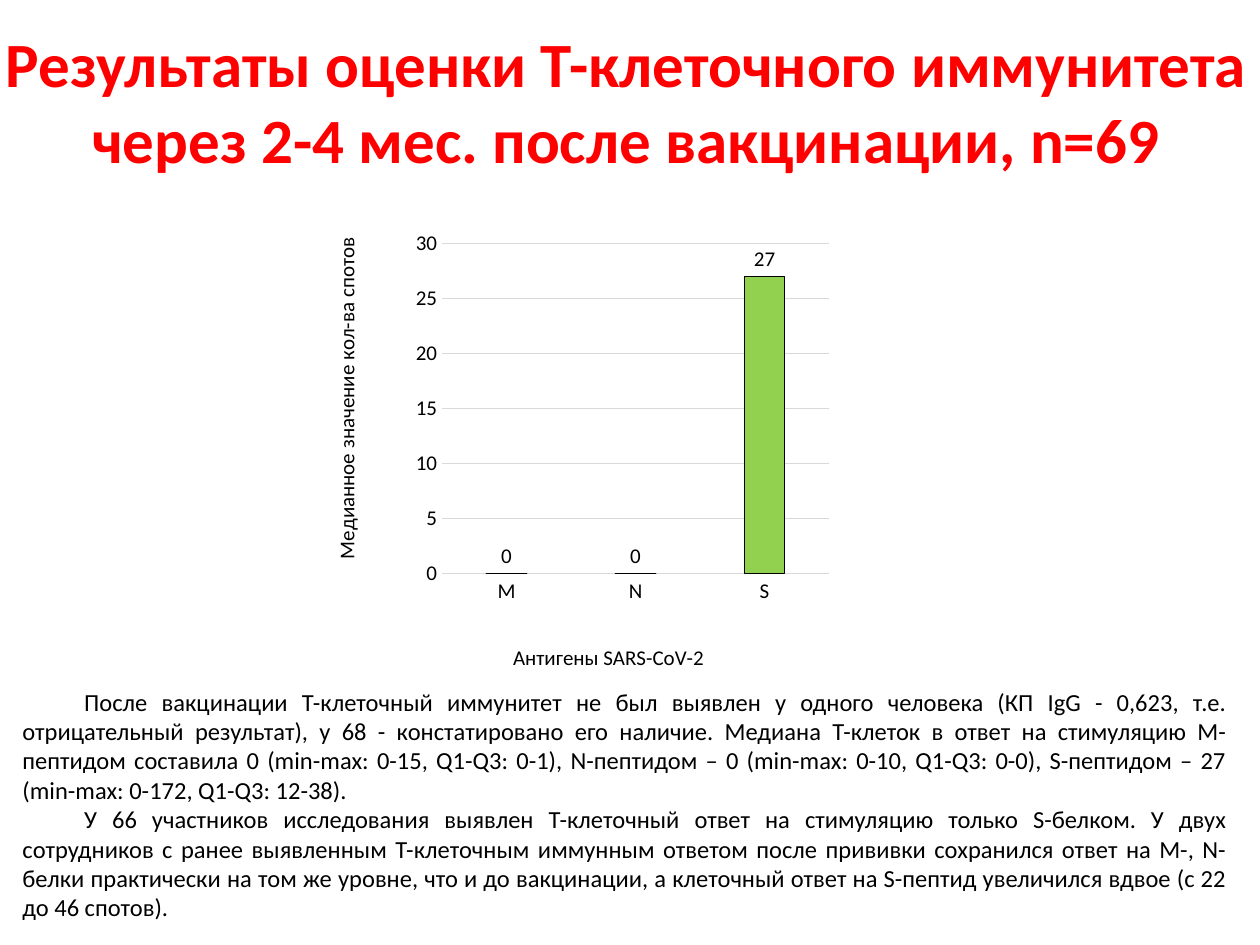
from lxml import etree
from pptx import Presentation
from pptx.chart.data import CategoryChartData
from pptx.dml.color import RGBColor
from pptx.enum.chart import XL_CHART_TYPE, XL_LABEL_POSITION, XL_TICK_MARK
from pptx.enum.text import MSO_ANCHOR, MSO_AUTO_SIZE, PP_ALIGN
from pptx.oxml.ns import qn
from pptx.util import Pt

COLUMNS = XL_CHART_TYPE.COLUMN_CLUSTERED
OUTSIDE_END = XL_LABEL_POSITION.OUTSIDE_END
NO_TICK = XL_TICK_MARK.NONE
MIDDLE = MSO_ANCHOR.MIDDLE
NO_FIT = MSO_AUTO_SIZE.NONE
CENTER, JUSTIFY = PP_ALIGN.CENTER, PP_ALIGN.JUSTIFY

RED = RGBColor(0xFF, 0x00, 0x00)
BLACK = RGBColor(0x00, 0x00, 0x00)
GREEN = RGBColor(0x92, 0xD0, 0x50)
GRID_GRAY = RGBColor(0xD9, 0xD9, 0xD9)

FONT = "Calibri"
EMU_PER_PX = 9144
TITLE_LAYOUT = 5

HEADING = "Результаты оценки Т-клеточного иммунитета через 2-4 мес. после вакцинации, n=69"
FINDINGS = [
    "После вакцинации Т-клеточный иммунитет не был выявлен у одного человека "
    "(КП IgG - 0,623, т.е. отрицательный результат), у 68 - констатировано его наличие. "
    "Медиана Т-клеток в ответ на стимуляцию М-пептидом составила 0 "
    "(min-max: 0-15, Q1-Q3: 0-1), N-пептидом – 0 (min-max: 0-10, Q1-Q3: 0-0), "
    "S-пептидом – 27 (min-max: 0-172, Q1-Q3: 12-38). ",
    "У 66 участников исследования выявлен Т-клеточный ответ на стимуляцию только S-белком. "
    "У двух сотрудников с ранее выявленным Т-клеточным иммунным ответом после прививки "
    "сохранился ответ на M-, N-белки практически на том же уровне, что и до вакцинации, "
    "а клеточный ответ на S-пептид увеличился вдвое (с 22 до 46 спотов). ",
]
SPOT_MEDIANS = {"M": 0, "N": 0, "S": 27}


def px(length):
    return length * EMU_PER_PX


def style_font(font, size, color=BLACK, bold=False):
    font.name = FONT
    font.size = Pt(size)
    font.bold = bold
    font.color.rgb = color


def set_layout(parent, index, **settings):
    for previous in parent.findall(qn("c:layout")):
        parent.remove(previous)
    layout = etree.Element(qn("c:layout"))
    manual = etree.SubElement(layout, qn("c:manualLayout"))
    for name, value in settings.items():
        etree.SubElement(manual, qn(f"c:{name}")).set("val", str(value))
    parent.insert(index, layout)


def add_heading(slide, left, top, width, height):
    heading = slide.shapes.title
    heading.left, heading.top = px(left), px(top)
    heading.width, heading.height = px(width), px(height)
    frame = heading.text_frame
    frame.text = HEADING
    frame.word_wrap = True
    frame.auto_size = NO_FIT
    frame.vertical_anchor = MIDDLE
    frame.paragraphs[0].alignment = CENTER
    style_font(frame.paragraphs[0].font, 36, RED, True)


def style_axis(axis, caption, x, y):
    axis.major_tick_mark = axis.minor_tick_mark = NO_TICK
    style_font(axis.tick_labels.font, 12)
    frame = axis.axis_title.text_frame
    frame.text = caption
    style_font(frame.paragraphs[0].font, 12)
    set_layout(axis.axis_title._element, 1, xMode="edge", yMode="edge", x=x, y=y)


def add_spot_chart(slide, left, top, width, height):
    medians = CategoryChartData()
    medians.categories = list(SPOT_MEDIANS)
    medians.add_series("Series 1", list(SPOT_MEDIANS.values()))
    chart = slide.shapes.add_chart(
        COLUMNS, px(left), px(top), px(width), px(height), medians
    ).chart
    chart.has_title = False
    chart.has_legend = False
    style_font(chart.font, 12)
    set_layout(chart._chartSpace.chart.plotArea, 0, layoutTarget="inner",
               xMode="edge", yMode="edge", x=0.216, y=0.177, w=0.599, h=0.569)

    antigens, spots = chart.category_axis, chart.value_axis
    style_axis(antigens, "Антигены SARS-CoV-2", 0.32, 0.86)
    antigens.format.line.color.rgb = GRID_GRAY
    antigens.format.line.width = Pt(0.75)
    style_axis(spots, "Медианное значение кол-ва спотов", 0.04, 0.16)
    spots.minimum_scale, spots.maximum_scale, spots.major_unit = 0, 30, 5
    spots.format.line.fill.background()
    spots.major_gridlines.format.line.color.rgb = GRID_GRAY
    spots.major_gridlines.format.line.width = Pt(0.75)

    plot = chart.plots[0]
    plot.vary_by_categories = False
    plot.gap_width = 219
    plot.overlap = -27
    columns = plot.series[0]
    columns.format.fill.solid()
    columns.format.fill.fore_color.rgb = GREEN
    columns.format.line.color.rgb = BLACK
    columns.format.line.width = Pt(0.75)
    labels = columns.data_labels
    labels.show_value = True
    labels.position = OUTSIDE_END
    style_font(labels.font, 12)


def add_findings(slide, left, top, width, height):
    frame = slide.shapes.add_textbox(px(left), px(top), px(width), px(height)).text_frame
    frame.word_wrap = True
    frame.text = "\n".join(FINDINGS)
    for paragraph in frame.paragraphs:
        paragraph.alignment = JUSTIFY
        paragraph._p.get_or_add_pPr().set("indent", str(px(49)))
        style_font(paragraph.font, 14)


def main():
    deck = Presentation()
    deck.slide_width, deck.slide_height = px(1000), px(750)
    slide = deck.slides.add_slide(deck.slide_layouts[TITLE_LAYOUT])
    add_heading(slide, -15, 0, 1024, 159)
    add_spot_chart(slide, 240, 112, 513, 460)
    add_findings(slide, 8, 540, 976, 217)
    deck.save("out.pptx")


if __name__ == "__main__":
    main()
